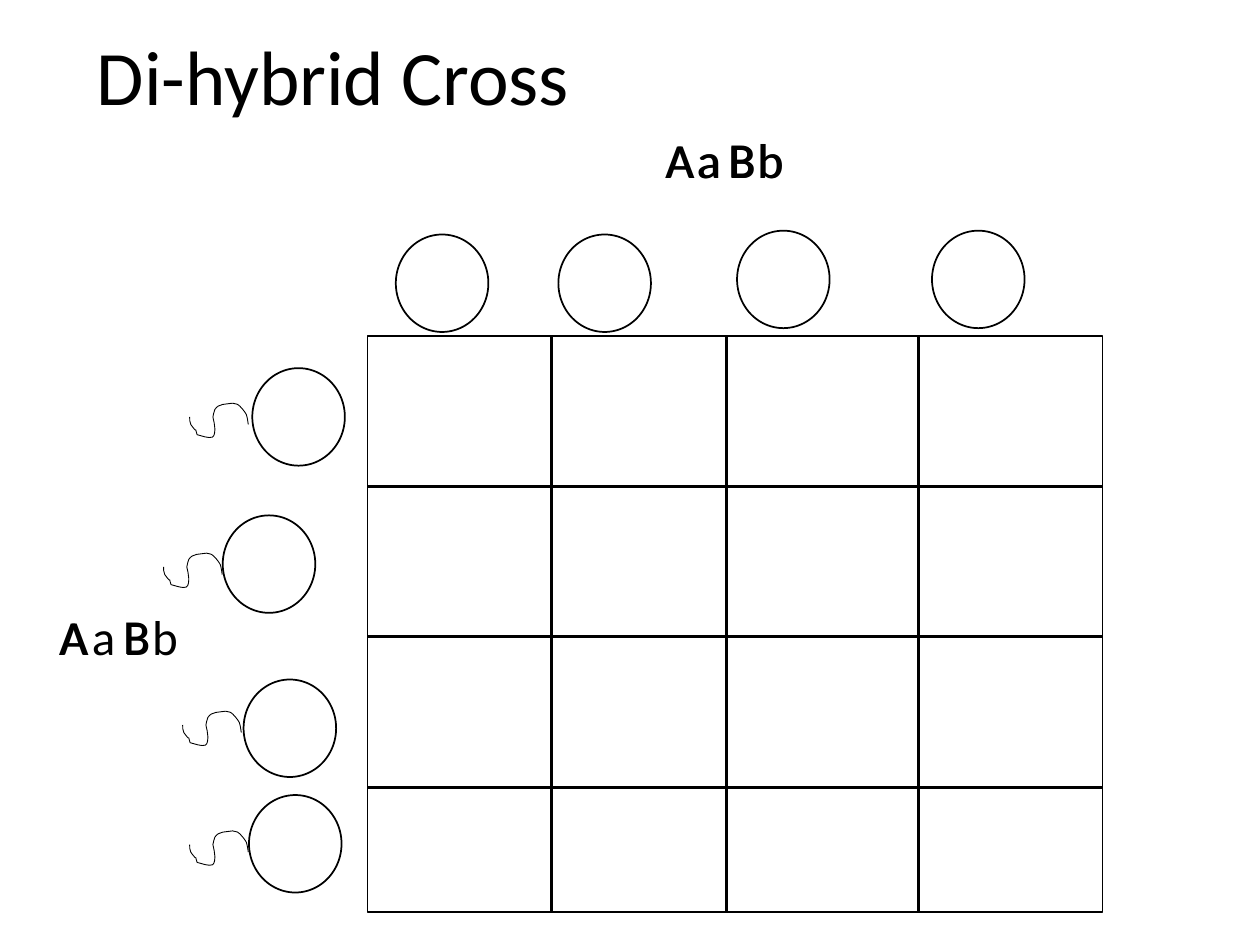
from pptx import Presentation
from pptx.dml.color import RGBColor
from pptx.enum.shapes import MSO_CONNECTOR as Connector, MSO_SHAPE as Shape
from pptx.enum.text import MSO_ANCHOR as Anchor, MSO_AUTO_SIZE as AutoSize
from pptx.oxml.ns import qn
from pptx.util import Pt
from lxml.etree import SubElement

BLACK = RGBColor(0, 0, 0)
WHITE = RGBColor(255, 255, 255)

GAMETE_SIZE = (52.9, 55.7)
EGGS = [(226.2, 134), (319.1, 134), (421.2, 131.8), (532.6, 131.8)]
SPERM = [(144.2, 210.4), (127.3, 294.5), (139.2, 388.3), (142.3, 454.3)]
TAILS = [(108.4, 230.4), (93.5, 316.1), (104.4, 406.4), (108.4, 474.8)]

TAIL_START = (33.5, 12.2)
TAIL_CURVES = [
    [(33.3, 10.8), (33.1, 8.6), (32.4, 6.5)],
    [(31.7, 5), (28.8, 1.4), (27.4, 0.7)],
    [(26.6, 0.7), (25.9, 0), (24.5, 0)],
    [(20.9, 0.7), (16.6, 0), (14.4, 3.6)],
    [(13.7, 5), (13.7, 6.5), (13.3, 7.9)],
    [(13.7, 10.1), (14.4, 12.2), (14.4, 14.4)],
    [(14.4, 15.8), (14.4, 18.7), (13, 19.4)],
    [(10.8, 20.2), (7.2, 18.7), (4.3, 18)],
    [(2.2, 11.5), (5.8, 19.4), (0.7, 12.2)],
    [(0, 10.8), (0, 9.4), (0, 7.9)],
]

GRID_LEFT, GRID_TOP, GRID_RIGHT, GRID_BOTTOM = 210, 192.2, 630, 521.3
COLUMN_EDGES = [315.4, 415.4, 524.9]
ROW_EDGES = [277.9, 363.6, 450]

TOP_GENOTYPE = [("A", 373, 70.6), ("B", 409, 70.6), ("A", 373.7, 70.6),
                ("a", 391, 70.6), ("a", 391.7, 70.6), ("B", 409, 69.8),
                ("B", 409.7, 70.6), ("b", 426.2, 70.6), ("b", 425.5, 70.6)]
SIDE_GENOTYPE = [("A", 26.6, 343.1), ("A", 27.4, 343.1), ("a", 45.4, 343.1),
                 ("B", 63.1, 342.7), ("B", 63.7, 343.1), ("b", 79.9, 343.1)]


class SlideBuilder:
    font_name = "Calibri"
    outline = 1
    divider = 1.75
    hairline = 0.5

    def __init__(self, slide):
        self.slide = slide

    def outlined(self, shapes, kind, left, top, width, height):
        shape = shapes.add_shape(kind, Pt(left), Pt(top), Pt(width), Pt(height))
        shape.shadow.inherit = False
        shape.fill.solid()
        shape.fill.fore_color.rgb = WHITE
        shape.line.color.rgb = BLACK
        shape.line.width = Pt(self.outline)

    def gamete(self, left, top):
        self.outlined(self.slide.shapes, Shape.OVAL, left, top, *GAMETE_SIZE)

    def tail(self, left, top):
        def place(x, y):
            return Pt(left + x), Pt(top + y)

        builder = self.slide.shapes.build_freeform(*place(*TAIL_START))
        points = [place(*point) for curve in TAIL_CURVES for point in curve]
        builder.add_line_segments(points, close=False)
        shape = builder.convert_to_shape()
        shape.shadow.inherit = False
        shape.fill.background()
        shape.line.color.rgb = BLACK
        shape.line.width = Pt(self.hairline)
        self.bend(shape)

    def bend(self, shape):
        outline = next(shape._element.iter(qn("a:path")))
        segments = outline.findall(qn("a:lnTo"))
        for start in range(0, len(segments), 3):
            curve = SubElement(outline, qn("a:cubicBezTo"))
            for segment in segments[start:start + 3]:
                curve.append(segment[0])
                outline.remove(segment)

    def line(self, shapes, x1, y1, x2, y2):
        connector = shapes.add_connector(
            Connector.STRAIGHT, Pt(x1), Pt(y1), Pt(x2), Pt(y2))
        connector.line.color.rgb = BLACK
        connector.line.width = Pt(self.divider)
        SubElement(connector._element.spPr, qn("a:effectLst"))

    def punnett_grid(self):
        shapes = self.slide.shapes.add_group_shape().shapes
        self.outlined(shapes, Shape.RECTANGLE, GRID_LEFT, GRID_TOP,
                      GRID_RIGHT - GRID_LEFT, GRID_BOTTOM - GRID_TOP)
        for x in COLUMN_EDGES:
            self.line(shapes, x, GRID_TOP, x, GRID_BOTTOM)
        for y in ROW_EDGES:
            self.line(shapes, GRID_LEFT, y, GRID_RIGHT, y)

    def text(self, text, left, top, width, height, size):
        box = self.slide.shapes.add_textbox(
            Pt(left), Pt(top), Pt(width), Pt(height))
        text_frame = box.text_frame
        text_frame.word_wrap = True
        text_frame.text = text
        font = text_frame.paragraphs[0].runs[0].font
        font.name = self.font_name
        font.size = Pt(size)
        font.color.rgb = BLACK
        return text_frame

    def title(self, text):
        text_frame = self.text(text, 48.2, 1.1, 648, 90, 44)
        text_frame.vertical_anchor = Anchor.MIDDLE
        text_frame.paragraphs[0].line_spacing = 0.9

    def genotype(self, alleles):
        for letter, left, top in alleles:
            text_frame = self.text(letter, left, top, 30.2, 41, 28)
            text_frame.auto_size = AutoSize.SHAPE_TO_FIT_TEXT


def main():
    presentation = Presentation()
    presentation.slide_width = Pt(720)
    presentation.slide_height = Pt(540)
    slide = presentation.slides.add_slide(presentation.slide_layouts[6])
    builder = SlideBuilder(slide)
    for left, top in EGGS + SPERM:
        builder.gamete(left, top)
    builder.title("Di-hybrid Cross")
    builder.punnett_grid()
    builder.genotype(TOP_GENOTYPE)
    builder.genotype(SIDE_GENOTYPE)
    for left, top in TAILS:
        builder.tail(left, top)
    presentation.save("out.pptx")


if __name__ == "__main__":
    main()
